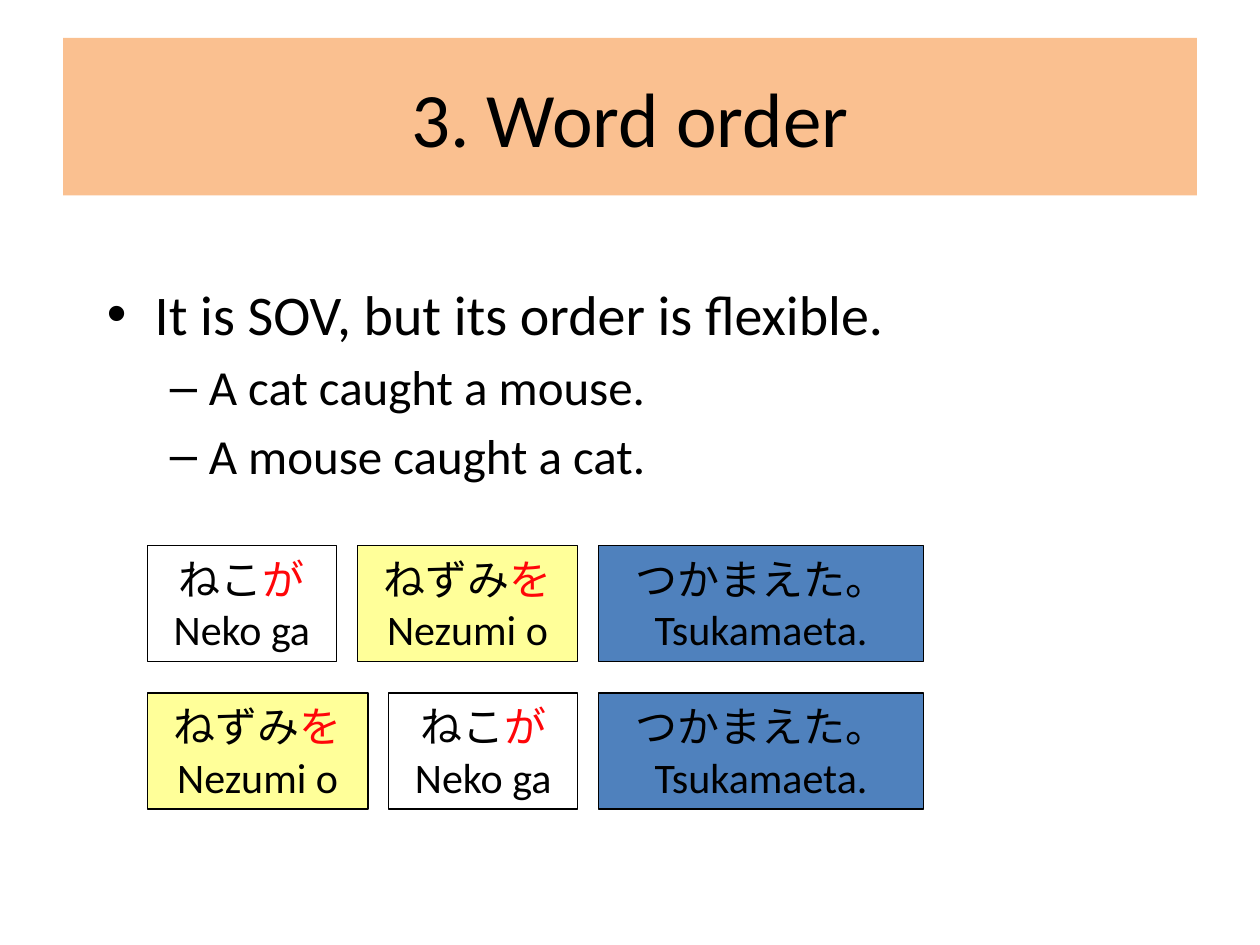
from lxml import etree
from pptx import Presentation
from pptx import util as u
from pptx.dml.color import RGBColor
from pptx.enum import shapes, text
from pptx.oxml.ns import qn

THEME = {
    "font": "Calibri",
    "title_size": 44, "level_sizes": (32, 28), "word_size": 24,
    "ink": "000000", "particle": "FF0609", "banner": "FAC090",
    "subject": "FFFFFF", "object": "FFFF99", "verb": "4F81BD",
}
TITLE = "3. Word order"
POINTS = [
    (0, "It is SOV, but its order is flexible."),
    (1, "A cat caught a mouse."),
    (1, "A mouse caught a cat."),
]
BULLETS = [("•", 0.38, -0.38), ("–", 0.81, -0.31)]
WORDS = {
    "subject": ("ねこ", "が", "Neko ga", 1.5),
    "object": ("ねずみ", "を", "Nezumi o", 1.75),
    "verb": ("つかまえた。", "", "Tsukamaeta.", 2.58),
}
SENTENCES = [("subject", "object", "verb"), ("object", "subject", "verb")]
LEFT, TOP, HEIGHT, GAP, ROW_STEP = 1.17, 4.33, 0.92, 0.165, 1.17


def color(name):
    return RGBColor.from_string(THEME[name])


def apply(target, values):
    for name, value in values.items():
        setattr(target, name, value)


def add_span(para, words, size, ink="ink"):
    span = para.add_run()
    span.text = words
    apply(span.font, {"name": THEME["font"], "size": u.Pt(size)})
    span.font.color.rgb = color(ink)


def fill(shape, name):
    shape.fill.solid()
    shape.fill.fore_color.rgb = color(name)


def add_title(page):
    title = page.shapes.title
    apply(title, {"left": u.Inches(0.5), "top": u.Inches(0.3),
                  "width": u.Inches(9), "height": u.Inches(1.25)})
    fill(title, "banner")
    title.text_frame.vertical_anchor = text.MSO_ANCHOR.MIDDLE
    para = title.text_frame.paragraphs[0]
    para.alignment = text.PP_ALIGN.CENTER
    add_span(para, TITLE, THEME["title_size"])


def add_points(page):
    box = page.shapes.add_textbox(*map(u.Inches, (0.75, 2.17, 8.5, 2.08)))
    frame = box.text_frame
    frame.word_wrap = True
    for index, (level, words) in enumerate(POINTS):
        para = frame.add_paragraph() if index else frame.paragraphs[0]
        size = THEME["level_sizes"][level]
        apply(para, {"level": level, "space_before": u.Pt(size * 0.2)})
        add_span(para, words, size)
        mark, margin, indent = BULLETS[level]
        props = para._p.get_or_add_pPr()
        props.set("marL", str(u.Inches(margin)))
        props.set("indent", str(u.Inches(indent)))
        etree.SubElement(props, qn("a:buFont")).set("typeface", "Arial")
        etree.SubElement(props, qn("a:buChar")).set("char", mark)


def add_word(page, role, left, top):
    stem, particle, reading, width = WORDS[role]
    box = page.shapes.add_shape(shapes.MSO_SHAPE.RECTANGLE,
                                *map(u.Inches, (left, top, width, HEIGHT)))
    box.shadow.inherit = False
    fill(box, role)
    box.line.color.rgb = color("ink")
    box.line.width = u.Pt(0.75)
    frame = box.text_frame
    apply(frame, {"word_wrap": False, "vertical_anchor": text.MSO_ANCHOR.MIDDLE})
    size = THEME["word_size"]
    kana, romaji = frame.paragraphs[0], frame.add_paragraph()
    for para in (kana, romaji):
        para.alignment = text.PP_ALIGN.CENTER
    add_span(kana, stem, size)
    if particle:
        add_span(kana, particle, size, "particle")
    add_span(romaji, reading, size)
    return left + width + GAP


def main():
    deck = Presentation()
    apply(deck, {"slide_width": u.Inches(10), "slide_height": u.Inches(7.5)})
    page = deck.slides.add_slide(deck.slide_layouts[5])
    add_title(page)
    add_points(page)
    for row, sentence in enumerate(SENTENCES):
        left = LEFT
        for role in sentence:
            left = add_word(page, role, left, TOP + row * ROW_STEP)
    deck.save("out.pptx")


if __name__ == "__main__":
    main()
